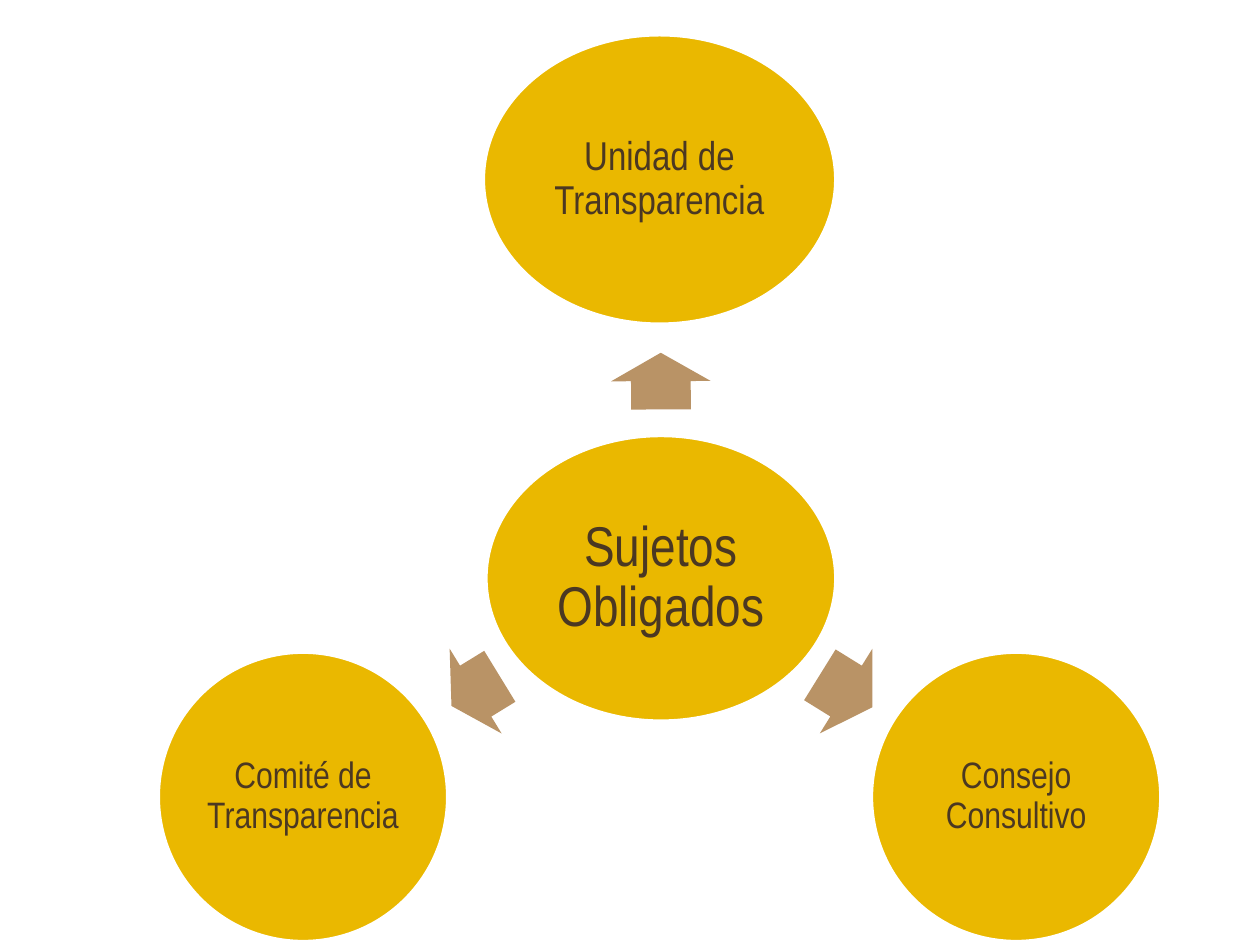
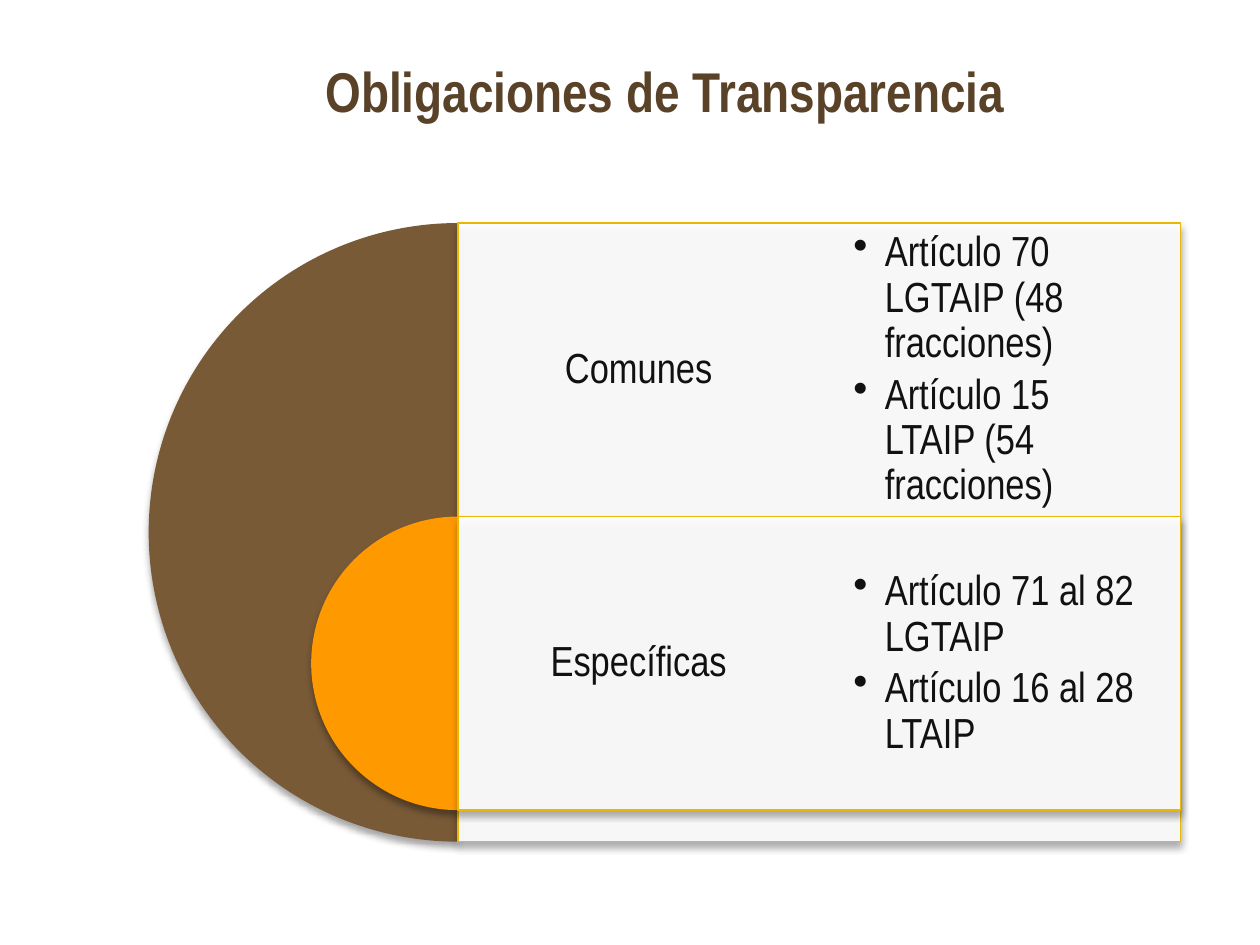
from dataclasses import dataclass

from lxml import etree
from pptx import Presentation
from pptx import util as u
from pptx.dml.color import RGBColor
from pptx.enum import shapes, text
from pptx.oxml.ns import qn


@dataclass(frozen=True)
class Theme:
    font: str = "Arial Narrow"
    gold: str = "EAB800"
    tan: str = "B99366"
    brown: str = "795A37"
    orange: str = "FF9900"
    white: str = "FFFFFF"
    title: str = "594228"
    circle_text: str = "4B3822"
    body: str = "111111"
    title_size: int = 32
    hub_size: int = 32
    top_size: int = 23
    side_size: int = 21
    body_size: int = 24


T = Theme()
SHAPE = shapes.MSO_SHAPE
CENTER = text.PP_ALIGN.CENTER


# Shared helpers
def rgb(color):
    return RGBColor.from_string(color)


def child(parent, tag, **attrs):
    return etree.SubElement(parent, qn(tag), {k: str(v) for k, v in attrs.items()})


def add_shape(s, kind, box, fill, line=None, width=0):
    sp = s.shapes.add_shape(kind, *map(u.Inches, box))
    sp.fill.solid()
    sp.fill.fore_color.rgb = rgb(fill)
    if line:
        sp.line.color.rgb = rgb(line)
        sp.line.width = u.Pt(width)
    else:
        sp.line.fill.background()
    sp.shadow.inherit = False
    return sp


def add_shadow(sp):
    effects = sp._element.spPr.find(qn("a:effectLst"))
    shadow = child(effects, "a:outerShdw", blurRad=u.Pt(4), dist=u.Pt(3),
                   dir=90 * 60000, rotWithShape=0)
    color = child(shadow, "a:srgbClr", val="000000")
    child(color, "a:alpha", val=35000)


def add_bullet(p):
    pPr = p._p.get_or_add_pPr()
    pPr.set("marL", str(u.Inches(0.25)))
    pPr.set("indent", str(u.Inches(-0.25)))
    child(pPr, "a:buChar", char="•")


def set_text(sp, lines, size, color, inset, bold=False, bullets=False,
             anchor=text.MSO_ANCHOR.MIDDLE, spacing=0.9):
    tf = sp.text_frame
    tf.word_wrap = True
    tf.vertical_anchor = anchor
    tf.margin_left = tf.margin_right = u.Inches(inset)
    tf.margin_top = tf.margin_bottom = u.Inches(inset)
    for i, line in enumerate(lines):
        p = tf.paragraphs[0] if i == 0 else tf.add_paragraph()
        p.text = line
        if bullets:
            add_bullet(p)
            p.space_after = u.Pt(3.6)
        p.alignment = text.PP_ALIGN.LEFT if bullets else CENTER
        p.line_spacing = spacing
        p.font.name, p.font.size, p.font.bold = T.font, u.Pt(size), bold
        p.font.color.rgb = rgb(color)


def add_text(s, box, lines, size, color, inset, **style):
    sp = s.shapes.add_textbox(*map(u.Inches, box))
    set_text(sp, lines, size, color, inset, **style)


# Slide 1: hub with three circles around it
def add_circle(s, box, label, size):
    sp = add_shape(s, SHAPE.OVAL, box, T.gold, T.white, 4.33)
    set_text(sp, [label], size, T.circle_text, 0.03)


def add_arrow(s, box, angle):
    sp = add_shape(s, SHAPE.RIGHT_ARROW, box, T.tan)
    sp.adjustments[0], sp.adjustments[1] = 0.6, 0.5
    sp.rotation = angle


def build_hub(s, box):
    x, y, w, h = box
    d = 2.33  # height of the outer circles
    low = y + h - d
    add_circle(s, (x + 2.6, y + 3.18, 2.81, 2.3), "Sujetos Obligados", T.hub_size)
    add_arrow(s, (x + 3.78, y + 2.37, 0.45, 0.79), 269.8)
    add_circle(s, (x + 2.58, y, 2.83, d), "Unidad de Transparencia", T.top_size)
    add_arrow(s, (x + 5.23, y + 4.83, 0.49, 0.79), 31.8)
    add_circle(s, (x + w - d, low, d, d), "Consejo Consultivo", T.side_size)
    add_arrow(s, (x + 2.31, y + 4.83, 0.45, 0.79), 148.5)
    add_circle(s, (x, low, d, d), "Comité de Transparencia", T.side_size)


# Slide 2: title and nested half circles with panels
def add_title(s, box, title):
    add_text(s, box, [title], T.title_size, T.title, 0.05, bold=True,
             anchor=text.MSO_ANCHOR.TOP, spacing=1.0)


def add_half_circle(s, box, fill):
    sp = add_shape(s, SHAPE.PIE, box, fill)
    sp.adjustments[0], sp.adjustments[1] = 54, 162  # 90° to 270°
    add_shadow(sp)


def add_panel(s, box):
    sp = add_shape(s, SHAPE.RECTANGLE, box, T.white, T.gold, 0.75)
    color = sp._element.spPr.find(qn("a:solidFill")).find(qn("a:srgbClr"))
    child(color, "a:alpha", val=90000)
    add_shadow(sp)


def build_nested_list(s, box, rows):
    x, y, w, h = box
    row_h = 2.33
    axis = x + h / 2
    panel_w = x + w - axis
    col_w = panel_w / 2
    for i, (label, articles, fill, d) in enumerate(rows):
        top = y + i * row_h
        add_half_circle(s, (axis - d / 2, top, d, d), fill)
        add_panel(s, (axis, top, panel_w, d))
        add_text(s, (axis, top, col_w, row_h), [label],
                 T.body_size, T.body, 0.1)
        add_text(s, (axis + col_w, top, col_w, row_h), articles,
                 T.body_size, T.body, 0.27, bullets=True)


def main():
    prs = Presentation()
    prs.slide_width, prs.slide_height = u.Inches(10), u.Inches(7.5)
    blank = prs.slide_layouts[6]

    s = prs.slides.add_slide(blank)
    build_hub(s, (1.24, 0.26, 7.99, 7.23))

    s = prs.slides.add_slide(blank)
    add_title(s, (0.83, 0.4, 8.9, 0.79), "Obligaciones de Transparencia")
    build_nested_list(s, (1.18, 1.77, 8.19, 4.91), [
        ("Comunes", ["Artículo 70 LGTAIP (48 fracciones)",
                     "Artículo 15 LTAIP (54 fracciones)"], T.brown, 4.91),
        ("Específicas", ["Artículo 71 al 82 LGTAIP",
                         "Artículo 16 al 28 LTAIP"], T.orange, 2.33),
    ])

    prs.save("out.pptx")


if __name__ == "__main__":
    main()
